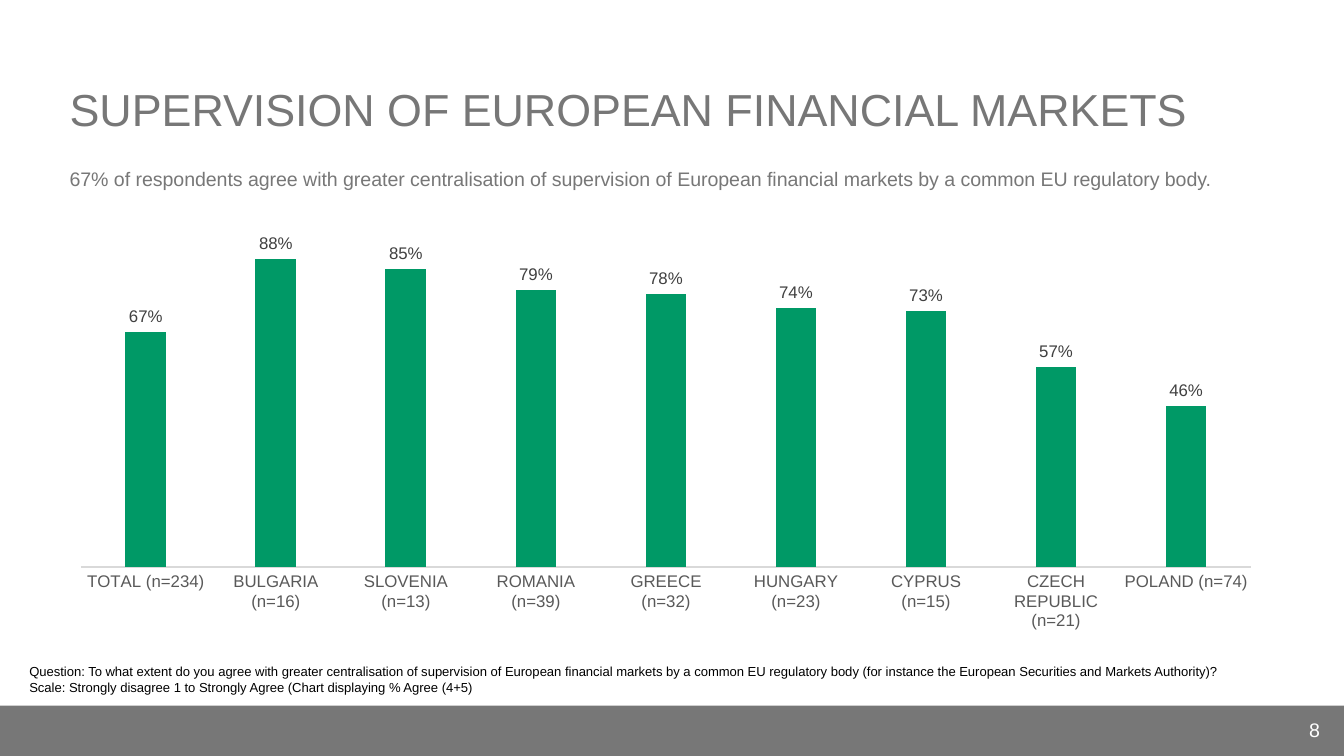
from pptx import Presentation
from pptx.chart.data import CategoryChartData
from pptx.dml.color import RGBColor
from pptx.enum.chart import XL_CHART_TYPE, XL_LABEL_POSITION, XL_TICK_MARK
from pptx.enum.shapes import MSO_SHAPE
from pptx.enum.text import MSO_ANCHOR, PP_ALIGN
from pptx.util import Inches, Pt

CELL = Inches(0.1)  # square grid: 100 columns by 56.25 rows
COLUMNS, ROWS = 100, 56.25
MARGIN = 4.2
FONT = "Arial"
COLORS = {
    "grey": "777777",
    "white": "FFFFFF",
    "black": "000000",
    "green": "009966",
    "axis": "D9D9D9",
    "category": "595959",
    "value": "404040",
}
AGREEMENT = {
    "TOTAL (n=234)": 0.67,
    "BULGARIA (n=16)": 0.88,
    "SLOVENIA (n=13)": 0.85,
    "ROMANIA (n=39)": 0.79,
    "GREECE (n=32)": 0.78,
    "HUNGARY (n=23)": 0.74,
    "CYPRUS (n=15)": 0.73,
    "CZECH REPUBLIC (n=21)": 0.57,
    "POLAND (n=74)": 0.46,
}
QUESTION = (
    "Question: To what extent do you agree with greater centralisation of "
    "supervision of European financial markets by a common EU regulatory body "
    "(for instance the European Securities and Markets Authority)?"
)
SCALE = "Scale: Strongly disagree 1 to Strongly Agree (Chart displaying % Agree (4+5)"
SUMMARY = (
    "67% of respondents agree with greater centralisation of supervision of "
    "European financial markets by a common EU regulatory body."
)


def color(name):
    return RGBColor.from_string(COLORS[name])


def cells(*lengths):
    """Turn grid columns and rows into slide lengths."""
    return [round(length * CELL) for length in lengths]


def apply_format(target, **values):
    for name, value in values.items():
        setattr(target, name, value)


def style_font(font, size, color_name):
    apply_format(font, name=FONT, size=Pt(size), bold=False)
    font.color.rgb = color(color_name)


def add_text(slide, box, lines, size, color_name,
             anchor=MSO_ANCHOR.TOP, align=PP_ALIGN.LEFT):
    frame = slide.shapes.add_textbox(*cells(*box)).text_frame
    apply_format(frame, word_wrap=True, vertical_anchor=anchor)
    frame.text = "\n".join(lines)
    for paragraph in frame.paragraphs:
        paragraph.alignment = align
        style_font(paragraph.font, size, color_name)


def add_footer_bar(slide, top):
    bar = slide.shapes.add_shape(
        MSO_SHAPE.RECTANGLE, *cells(0, top, COLUMNS, ROWS - top))
    bar.shadow.inherit = False
    bar.fill.solid()
    bar.fill.fore_color.rgb = color("grey")
    bar.line.fill.background()


def add_agreement_chart(slide, box):
    data = CategoryChartData(number_format="0%")
    data.categories = list(AGREEMENT)
    data.add_series("Series 1", list(AGREEMENT.values()))
    chart = slide.shapes.add_chart(
        XL_CHART_TYPE.COLUMN_CLUSTERED, *cells(*box), data).chart
    apply_format(chart, has_legend=False, has_title=False)
    style_font(chart.font, 10, "black")

    apply_format(chart.value_axis, visible=False, has_major_gridlines=False,
                 minimum_scale=0, maximum_scale=1)
    axis = chart.category_axis
    apply_format(axis, major_tick_mark=XL_TICK_MARK.NONE,
                 minor_tick_mark=XL_TICK_MARK.NONE)
    style_font(axis.tick_labels.font, 9, "category")
    axis.format.line.color.rgb = color("axis")
    axis.format.line.width = Pt(0.75)

    plot = chart.plots[0]
    apply_format(plot, gap_width=219, overlap=-27, vary_by_categories=False)
    series = plot.series[0]
    series.format.fill.solid()
    series.format.fill.fore_color.rgb = color("green")
    labels = series.data_labels
    apply_format(labels, show_value=True, number_format="0%",
                 number_format_is_linked=False,
                 position=XL_LABEL_POSITION.OUTSIDE_END)
    style_font(labels.font, 9, "value")


def main():
    presentation = Presentation()
    apply_format(presentation, slide_width=round(COLUMNS * CELL),
                 slide_height=round(ROWS * CELL))
    slide = presentation.slides.add_slide(presentation.slide_layouts[6])

    add_footer_bar(slide, 52.5)
    add_text(slide, (MARGIN, 1.2, COLUMNS - 2 * MARGIN, 9.4),
             ["SUPERVISION OF EUROPEAN FINANCIAL MARKETS"], 24, "grey",
             anchor=MSO_ANCHOR.BOTTOM)
    add_text(slide, (90.6, 52.8, 8.6, 3), ["8"], 10.5, "white",
             anchor=MSO_ANCHOR.MIDDLE, align=PP_ALIGN.RIGHT)
    add_agreement_chart(slide, (MARGIN, 15.5, 90.7, 32.1))
    add_text(slide, (1.2, 48.9, 93.7, 3.4), [QUESTION, SCALE], 7, "black")
    add_text(slide, (MARGIN, 11.9, 91.7, 5.6), [SUMMARY], 10.5, "grey")

    presentation.save("out.pptx")


if __name__ == "__main__":
    main()
